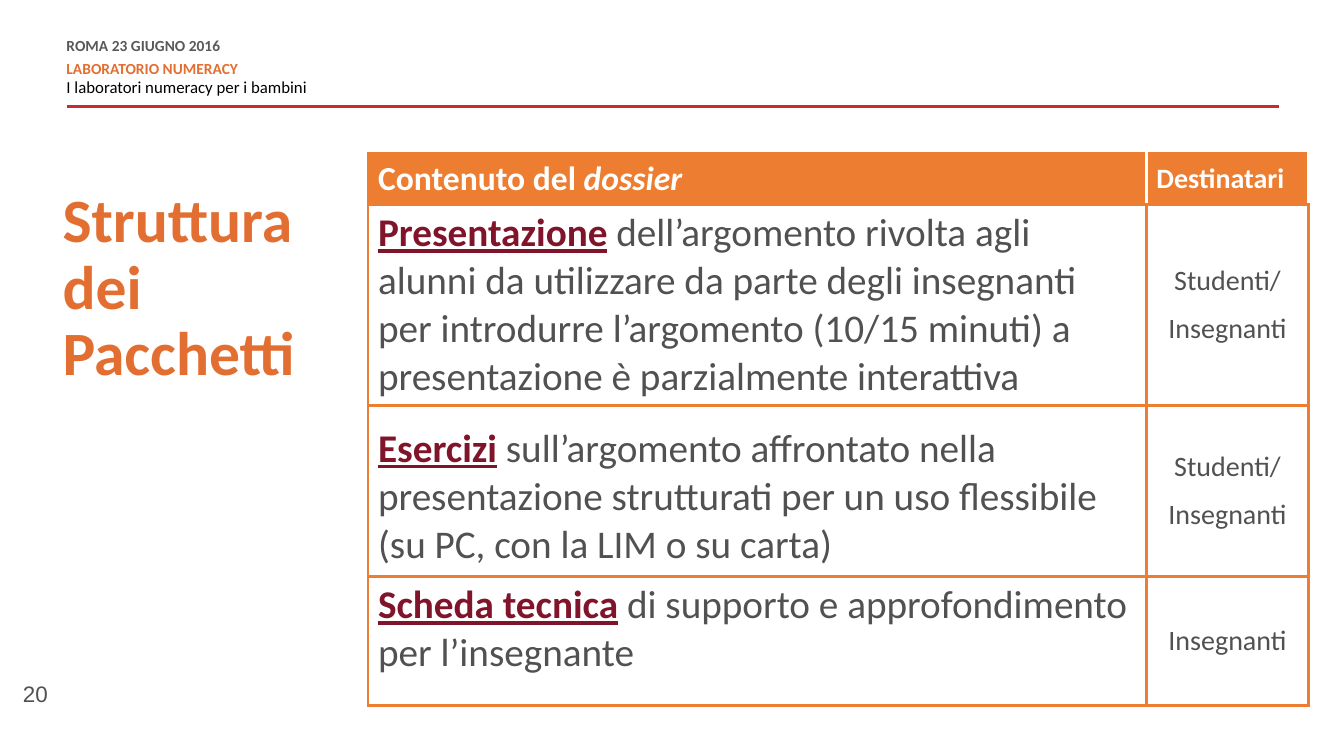
from lxml.etree import SubElement
from pptx import Presentation
from pptx.dml.color import RGBColor
from pptx.enum.shapes import MSO_CONNECTOR
from pptx.enum.text import MSO_ANCHOR, PP_ALIGN
from pptx.oxml import parse_xml
from pptx.oxml.ns import nsdecls, qn
from pptx.util import Inches, Pt

WHITE = RGBColor(0xFF, 0xFF, 0xFF)
BLACK = RGBColor(0x00, 0x00, 0x00)
ORANGE = RGBColor(0xED, 0x7D, 0x31)
TITLE_ORANGE = RGBColor(0xE2, 0x6F, 0x31)
RED = RGBColor(0xC7, 0x2A, 0x31)
MAROON = RGBColor(0x7F, 0x14, 0x2A)
GRAY = RGBColor(0x50, 0x51, 0x50)
DATE_GRAY = RGBColor(0x59, 0x59, 0x59)

TITLE_LINES = ["Struttura", "dei", "Pacchetti"]
PAGE_NUMBER = "20"
EVENT_LINES = [
    ("ROMA 23 GIUGNO 2016", 11, DATE_GRAY, True, 0, 6),
    ("LABORATORIO NUMERACY", 11, TITLE_ORANGE, True, 0, 0),
    ("I laboratori numeracy per i bambini", 12, BLACK, False, 3, 6),
]
HEADINGS = [("Contenuto del ", "dossier", 24), ("Destinatari", "", 20)]
DOSSIER = [
    ("Presentazione",
     " dell’argomento rivolta agli alunni da utilizzare da parte degli insegnanti "
     "per introdurre l’argomento (10/15 minuti) a presentazione è parzialmente interattiva",
     ["Studenti/", "Insegnanti"], MSO_ANCHOR.MIDDLE, 0.05),
    ("Esercizi",
     " sull’argomento affrontato nella presentazione strutturati per un uso flessibile "
     "(su PC, con la LIM o su carta)",
     ["Studenti/", "Insegnanti"], MSO_ANCHOR.TOP, 0.2),
    ("Scheda tecnica", " di supporto e approfondimento per l’insegnante",
     ["Insegnanti"], MSO_ANCHOR.TOP, 0.05),
]
COLUMN_WIDTHS = [7.72, 1.61]
ROW_HEIGHTS = [0.51, 1.99, 1.7, 1.28]


def add_run(paragraph, text, size, color, bold=False, font_name="Calibri"):
    """Append a formatted run and return it."""
    run = paragraph.add_run()
    run.text = text
    run.font.name = font_name
    run.font.size = Pt(size)
    run.font.bold = bold
    run.font.color.rgb = color
    return run


def clear_margins(text_frame):
    """Remove the inner margins of a text frame."""
    text_frame.margin_left = text_frame.margin_right = 0
    text_frame.margin_top = text_frame.margin_bottom = 0


def set_borders(cell, left, right):
    """Draw the four borders of a cell, orange above and below."""
    properties = cell._tc.get_or_add_tcPr()
    sides = [("L", left), ("R", right), ("T", ORANGE), ("B", ORANGE)]
    for position, (side, color) in enumerate(sides):
        border = parse_xml(
            f'<a:ln{side} {nsdecls("a")} w="{Pt(2.25)}"><a:solidFill>'
            f'<a:srgbClr val="{color}"/></a:solidFill></a:ln{side}>')
        properties.insert(position, border)


def add_rule(slide):
    """Draw the red line under the event lines."""
    rule = slide.shapes.add_connector(
        MSO_CONNECTOR.STRAIGHT, Inches(0.66), Inches(1.06), Inches(12.69), Inches(1.06))
    rule.line.color.rgb = RED
    rule.line.width = Pt(2)
    SubElement(rule._element.spPr, qn("a:effectLst"))


def add_event_lines(slide):
    """Write the date, the event and the topic."""
    box = slide.shapes.add_textbox(Inches(0.66), Inches(0.39), Inches(8.34), Inches(0.59))
    frame = box.text_frame
    frame.word_wrap = True
    clear_margins(frame)
    for index, (text, size, color, bold, before, after) in enumerate(EVENT_LINES):
        paragraph = frame.add_paragraph() if index else frame.paragraphs[0]
        paragraph.line_spacing = Pt(10.8)
        paragraph.space_before = Pt(before)
        paragraph.space_after = Pt(after)
        add_run(paragraph, text, size, color, bold)


def add_page_number(slide):
    """Write the page number at the lower left."""
    box = slide.shapes.add_textbox(Inches(0.13), Inches(6.7), Inches(0.86), Inches(0.37))
    box.text_frame.word_wrap = True
    add_run(box.text_frame.paragraphs[0], PAGE_NUMBER, 16, GRAY, font_name="Arial")


def fill_title(title):
    """Place and format the title."""
    title.left, title.top = Inches(0.62), Inches(1.88)
    title.width, title.height = Inches(2.9), Inches(2.8)
    frame = title.text_frame
    frame.word_wrap = True
    frame.vertical_anchor = MSO_ANCHOR.TOP
    clear_margins(frame)
    for index, line in enumerate(TITLE_LINES):
        paragraph = frame.add_paragraph() if index else frame.paragraphs[0]
        paragraph.alignment = PP_ALIGN.LEFT
        paragraph.line_spacing = 0.9
        add_run(paragraph, line, 44, TITLE_ORANGE, True)


def add_dossier_table(slide):
    """Build the table of dossier contents and recipients."""
    table = slide.shapes.add_table(
        len(ROW_HEIGHTS), len(COLUMN_WIDTHS), Inches(3.65), Inches(1.52),
        Inches(sum(COLUMN_WIDTHS)), Inches(sum(ROW_HEIGHTS))).table
    table.horz_banding = False
    for column, width in zip(table.columns, COLUMN_WIDTHS):
        column.width = Inches(width)
    for row, height in zip(table.rows, ROW_HEIGHTS):
        row.height = Inches(height)
    for cell in table.iter_cells():
        cell.vertical_anchor = MSO_ANCHOR.MIDDLE
        cell.fill.background()

    for column, (text, emphasis, size) in enumerate(HEADINGS):
        cell = table.cell(0, column)
        cell.fill.solid()
        cell.fill.fore_color.rgb = ORANGE
        set_borders(cell, WHITE if column else ORANGE, WHITE)
        paragraph = cell.text_frame.paragraphs[0]
        add_run(paragraph, text, size, WHITE, True)
        if emphasis:
            add_run(paragraph, emphasis, size, WHITE, True).font.italic = True

    for row, (name, description, recipients, anchor, top) in enumerate(DOSSIER, start=1):
        content, audience = table.cell(row, 0), table.cell(row, 1)
        for cell in (content, audience):
            set_borders(cell, ORANGE, ORANGE)
        content.vertical_anchor = anchor
        content.margin_top = Inches(top)
        content.margin_right = Inches(0.14)
        paragraph = content.text_frame.paragraphs[0]
        add_run(paragraph, name, 28, MAROON, True).font.underline = True
        add_run(paragraph, description, 28, GRAY)
        frame = audience.text_frame
        for index, recipient in enumerate(recipients):
            paragraph = frame.add_paragraph() if index else frame.paragraphs[0]
            paragraph.alignment = PP_ALIGN.CENTER
            paragraph.space_before = Pt(10 if index else 0)
            add_run(paragraph, recipient, 20, GRAY)


def main():
    """Build and save the slide."""
    presentation = Presentation()
    presentation.slide_width = Inches(13.33)
    presentation.slide_height = Inches(7.5)
    slide = presentation.slides.add_slide(presentation.slide_layouts[5])
    add_rule(slide)
    add_event_lines(slide)
    add_page_number(slide)
    add_dossier_table(slide)
    fill_title(slide.shapes.title)
    presentation.save("out.pptx")


if __name__ == "__main__":
    main()
